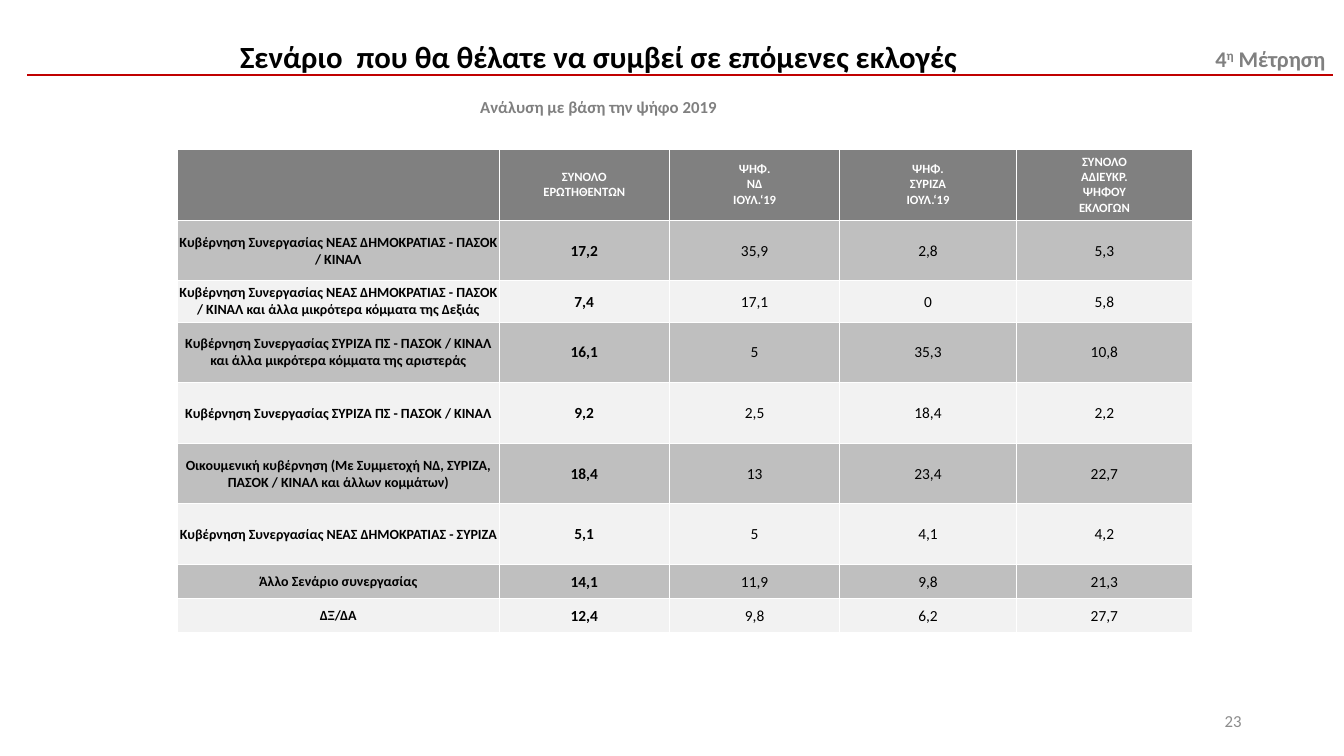
from lxml.etree import SubElement
from pptx import Presentation
from pptx.dml.color import RGBColor
from pptx.enum.shapes import MSO_CONNECTOR as Connector
from pptx.enum.text import MSO_ANCHOR as Anchor, PP_ALIGN as Align
from pptx.oxml.ns import qn
from pptx.util import Pt

BLACK = RGBColor(0x00, 0x00, 0x00)
WHITE = RGBColor(0xFF, 0xFF, 0xFF)
GRAY = RGBColor(0x80, 0x80, 0x80)
NUMBER_GRAY = RGBColor(0x8C, 0x8C, 0x8C)
DARK_BAND = RGBColor(0xBF, 0xBF, 0xBF)
LIGHT_BAND = RGBColor(0xF2, 0xF2, 0xF2)
RED = RGBColor(0xC0, 0x00, 0x00)

COLUMN_WIDTHS = [229.8, 121.7, 121.7, 126, 126]
ROW_HEIGHTS = [36.7, 43.3, 29.5, 43.3, 43.3, 43.3, 43.3, 24.4, 24.4]
HEADERS = [
    [],
    ["ΣΥΝΟΛΟ", "ΕΡΩΤΗΘΕΝΤΩΝ"],
    ["ΨΗΦ.", "ΝΔ", "ΙΟΥΛ.‘19"],
    ["ΨΗΦ.", "ΣΥΡΙΖΑ", "ΙΟΥΛ.‘19"],
    ["ΣΥΝΟΛΟ", "ΑΔΙΕΥΚΡ.", "ΨΗΦΟΥ", "ΕΚΛΟΓΩΝ"],
]
SCENARIOS = [
    ("Κυβέρνηση Συνεργασίας ΝΕΑΣ ΔΗΜΟΚΡΑΤΙΑΣ - ΠΑΣΟΚ / ΚΙΝΑΛ",
     "17,2", "35,9", "2,8", "5,3"),
    ("Κυβέρνηση Συνεργασίας ΝΕΑΣ ΔΗΜΟΚΡΑΤΙΑΣ - ΠΑΣΟΚ / ΚΙΝΑΛ και άλλα μικρότερα κόμματα της Δεξιάς",
     "7,4", "17,1", "0", "5,8"),
    ("Κυβέρνηση Συνεργασίας ΣΥΡΙΖΑ ΠΣ - ΠΑΣΟΚ / ΚΙΝΑΛ και άλλα μικρότερα κόμματα της αριστεράς",
     "16,1", "5", "35,3", "10,8"),
    ("Κυβέρνηση Συνεργασίας ΣΥΡΙΖΑ ΠΣ - ΠΑΣΟΚ / ΚΙΝΑΛ",
     "9,2", "2,5", "18,4", "2,2"),
    ("Οικουμενική κυβέρνηση (Με Συμμετοχή ΝΔ, ΣΥΡΙΖΑ, ΠΑΣΟΚ / ΚΙΝΑΛ και άλλων κομμάτων)",
     "18,4", "13", "23,4", "22,7"),
    ("Κυβέρνηση Συνεργασίας ΝΕΑΣ ΔΗΜΟΚΡΑΤΙΑΣ - ΣΥΡΙΖΑ",
     "5,1", "5", "4,1", "4,2"),
    ("Άλλο Σενάριο συνεργασίας", "14,1", "11,9", "9,8", "21,3"),
    ("ΔΞ/ΔΑ", "12,4", "9,8", "6,2", "27,7"),
]


def apply_format(target, values):
    """Set each attribute of the target from a dict."""
    for name, value in values.items():
        setattr(target, name, value)


def add_span(para, text, size, color, bold=True):
    """Add a formatted run to a paragraph."""
    span = para.add_run()
    span.text = text
    apply_format(span.font, {"name": "Calibri", "size": Pt(size), "bold": bold})
    span.font.color.rgb = color
    return span


def add_box(page, left, top, width, height, **frame_format):
    """Add a text box and return its text frame."""
    box = page.shapes.add_textbox(Pt(left), Pt(top), Pt(width), Pt(height))
    apply_format(box.text_frame, {"word_wrap": True, **frame_format})
    return box.text_frame


def add_rule(page):
    """Draw the red line under the title."""
    rule = page.shapes.add_connector(
        Connector.STRAIGHT, Pt(19.5), Pt(53.4), Pt(952), Pt(53.4))
    rule.line.color.rgb = RED
    rule.line.width = Pt(1.5)
    SubElement(rule._element.spPr, qn("a:effectLst"))


def add_wave_label(page):
    """Add the survey wave label with its superscript ending."""
    para = add_box(page, 861, 28.8, 98.6, 26.6, word_wrap=False).paragraphs[0]
    add_span(para, "4", 16, GRAY)
    ending = add_span(para, "η", 16, GRAY)
    ending._r.get_or_add_rPr().set("baseline", "30000")
    add_span(para, " Μέτρηση", 16, GRAY)


def add_title(page):
    """Add the title and its subtitle."""
    frame = add_box(page, 10, 8.6, 835, 90, vertical_anchor=Anchor.MIDDLE)
    title = frame.paragraphs[0]
    apply_format(title, {"alignment": Align.CENTER, "line_spacing": 1.1})
    add_span(title, "Σενάριο  που θα θέλατε να συμβεί σε επόμενες εκλογές", 22, BLACK)
    subtitle = frame.add_paragraph()
    apply_format(subtitle, {"alignment": Align.CENTER, "line_spacing": 1.2,
                            "space_before": Pt(13)})
    add_span(subtitle, "Ανάλυση με βάση την ψήφο 2019", 12, GRAY)


def add_page_number(page):
    """Add the page number at the lower right."""
    frame = add_box(page, 678, 500.4, 216, 28.8, vertical_anchor=Anchor.MIDDLE)
    para = frame.paragraphs[0]
    para.alignment = Align.RIGHT
    add_span(para, "23", 12, NUMBER_GRAY, False)


def add_borders(cell):
    """Give a cell thin white borders."""
    properties = cell._tc.get_or_add_tcPr()
    for side in ("lnL", "lnR", "lnT", "lnB"):
        edge = SubElement(properties, qn(f"a:{side}"), w=str(Pt(0.5)))
        fill = SubElement(edge, qn("a:solidFill"))
        SubElement(fill, qn("a:srgbClr"), val=str(WHITE))


def fill_cell(cell, lines, fill, **text_format):
    """Fill a cell with centred lines of text."""
    add_borders(cell)
    cell.fill.solid()
    cell.fill.fore_color.rgb = fill
    cell.vertical_anchor = Anchor.MIDDLE
    for index, line in enumerate(lines):
        frame = cell.text_frame
        para = frame.add_paragraph() if index else frame.paragraphs[0]
        para.alignment = Align.CENTER
        add_span(para, line, **text_format)


def add_scenario_table(page):
    """Add the table of scenarios by 2019 vote."""
    table = page.shapes.add_table(
        len(ROW_HEIGHTS), len(COLUMN_WIDTHS), Pt(126.7), Pt(106.6),
        Pt(sum(COLUMN_WIDTHS)), Pt(sum(ROW_HEIGHTS))).table
    for column, width in zip(table.columns, COLUMN_WIDTHS):
        column.width = Pt(width)
    for row, height in zip(table.rows, ROW_HEIGHTS):
        row.height = Pt(height)
    for column, lines in enumerate(HEADERS):
        fill_cell(table.cell(0, column), lines, GRAY, size=9, color=WHITE)
    margins = {"margin_left": Pt(0.7), "margin_right": Pt(0.7),
               "margin_top": Pt(0.7), "margin_bottom": Pt(0)}
    for row, scenario in enumerate(SCENARIOS, 1):
        band = DARK_BAND if row % 2 else LIGHT_BAND
        for column, text in enumerate(scenario):
            cell = table.cell(row, column)
            apply_format(cell, margins)
            fill_cell(cell, [text], band, size=11 if column else 10,
                      color=BLACK, bold=column < 2)


def main():
    """Build and save the slide."""
    deck = Presentation()
    apply_format(deck, {"slide_width": Pt(960), "slide_height": Pt(540)})
    page = deck.slides.add_slide(deck.slide_layouts[6])
    add_rule(page)
    add_wave_label(page)
    add_scenario_table(page)
    add_title(page)
    add_page_number(page)
    deck.save("out.pptx")


if __name__ == "__main__":
    main()
